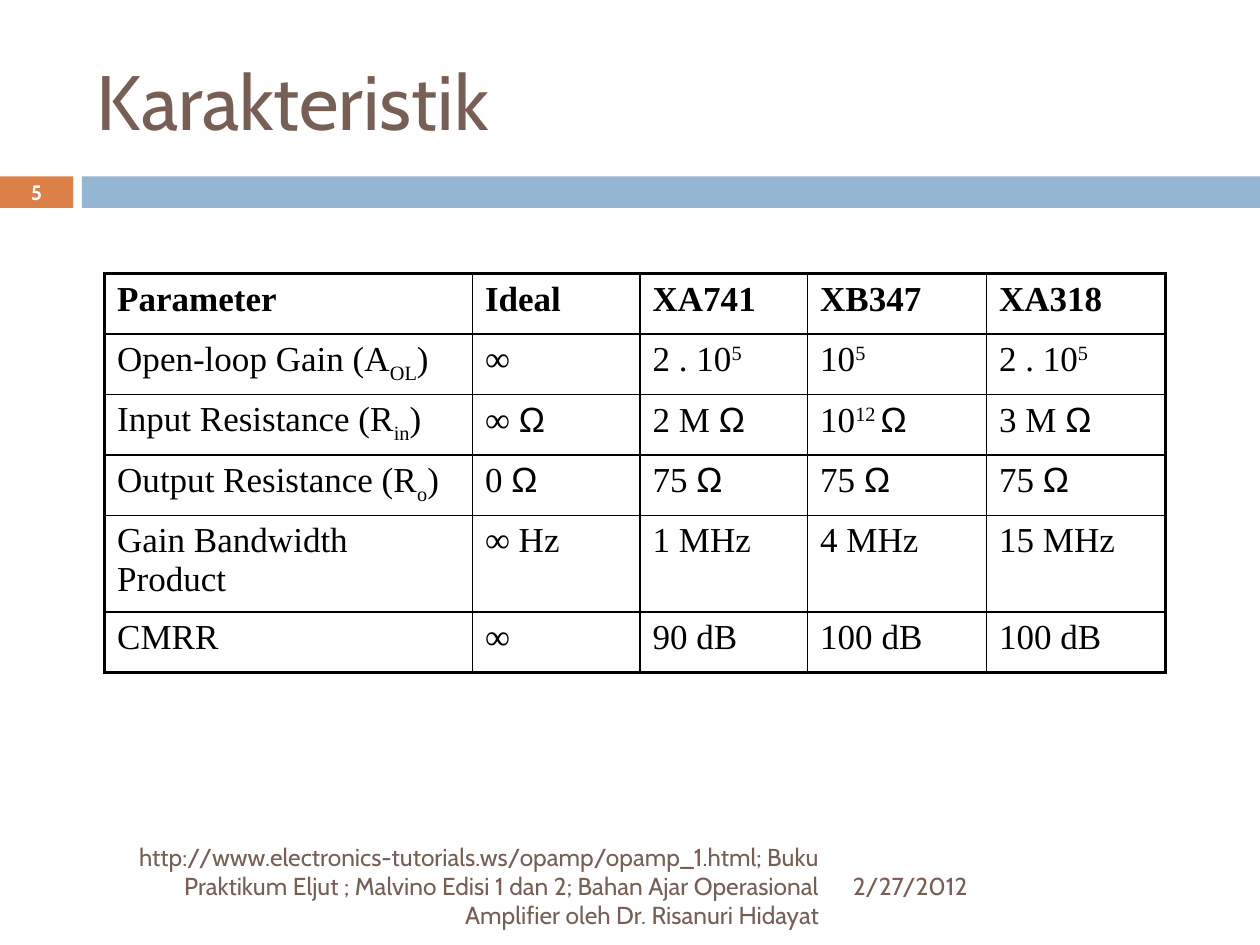
from lxml import etree
from pptx import Presentation, util as u
from pptx.dml.color import RGBColor
from pptx.enum import shapes, text
from pptx.oxml import ns


def color(value):
    return RGBColor.from_string(value)


def write(tf, content, size=14, font="Cabin", fill="775F55", bold=False, align="LEFT"):
    p = tf.paragraphs[0]
    p.alignment = getattr(text.PP_ALIGN, align)
    for part in content.split("|"):
        r = p.add_run()
        r.text = part.lstrip("^_")
        r.font.size = u.Pt(size)
        r.font.name = "Arial" if part == "Ω" else font
        r.font.bold = bold
        r.font.color.rgb = color(fill)
        if part[0] in "^_":
            r._r.get_or_add_rPr().set("baseline", "30000" if part[0] == "^" else "-25000")


prs = Presentation()
prs.slide_width = u.Inches(10)
prs.slide_height = u.Inches(7.5)
s = prs.slides.add_slide(prs.slide_layouts[6])

for left, width, fill in [(0, 0.58, "DD8047"), (0.65, 9.35, "94B6D2")]:
    sp = s.shapes.add_shape(shapes.MSO_SHAPE.RECTANGLE, u.Inches(left), u.Inches(1.4),
                            u.Inches(width), u.Inches(0.25))
    sp.shadow.inherit = False
    sp.fill.solid()
    sp.fill.fore_color.rgb = color(fill)
    sp.line.fill.background()

labels = [
    ((0.67, 0.25, 8.92, 1.08), "Karakteristik", dict(size=44)),
    ((6.67, 6.83, 2.92, 0.4), "2/27/2012", {}),
    ((0.67, 6.83, 5.93, 0.4),
     "http://www.electronics-tutorials.ws/opamp/opamp_1.html; Buku Praktikum Eljut ; "
     "Malvino Edisi 1 dan 2; Bahan Ajar Operasional Amplifier oleh Dr. Risanuri Hidayat",
     dict(align="RIGHT")),
    ((0, 1.39, 0.58, 0.27), "5", dict(size=11.9, fill="FFFFFF", bold=True, align="CENTER")),
]
for box, content, style in labels:
    tf = s.shapes.add_textbox(*map(u.Inches, box)).text_frame
    tf.word_wrap = True
    tf.vertical_anchor = text.MSO_ANCHOR.MIDDLE
    write(tf, content, **style)

rows = [
    ["Parameter", "Ideal", "XA741", "XB347", "XA318"],
    ["Open-loop Gain (A|_OL|)", "∞", "2 . 10|^5", "10|^5", "2 . 10|^5"],
    ["Input Resistance (R|_in|)", "∞ |Ω", "2 M |Ω", "10|^12 |Ω", "3 M |Ω"],
    ["Output Resistance (R|_o|)", "0 |Ω", "75 |Ω", "75 |Ω", "75 |Ω"],
    ["Gain Bandwidth Product", "∞ Hz", "1 MHz", "4 MHz", "15 MHz"],
    ["CMRR", "∞", "90 dB", "100 dB", "100 dB"],
]
widths = [2.92, 1.33, 1.33, 1.42, 1.42]
table = s.shapes.add_table(len(rows), len(widths), u.Inches(0.83), u.Inches(2.17),
                           u.Inches(sum(widths)), u.Inches(0.48 * len(rows))).table
table.first_row = False
table.horz_banding = False
for column, width in zip(table.columns, widths):
    column.width = u.Inches(width)

for i, row in enumerate(rows):
    table.rows[i].height = u.Inches(0.48)
    for j, content in enumerate(row):
        cell = table.cell(i, j)
        write(cell.text_frame, content, size=20, font="Times New Roman",
              fill="000000", bold=i == 0)
        tcPr = cell._tc.get_or_add_tcPr()
        outer = {"lnL": j == 0, "lnR": j == len(widths) - 1,
                 "lnT": i == 0, "lnB": i == len(rows) - 1}
        for side, thick in outer.items():
            ln = etree.SubElement(tcPr, ns.qn("a:" + side), w=str(u.Pt(2.25 if thick else 1)))
            solid = etree.SubElement(ln, ns.qn("a:solidFill"))
            etree.SubElement(solid, ns.qn("a:srgbClr"), val="000000")
        cell.fill.background()

prs.save("out.pptx")
